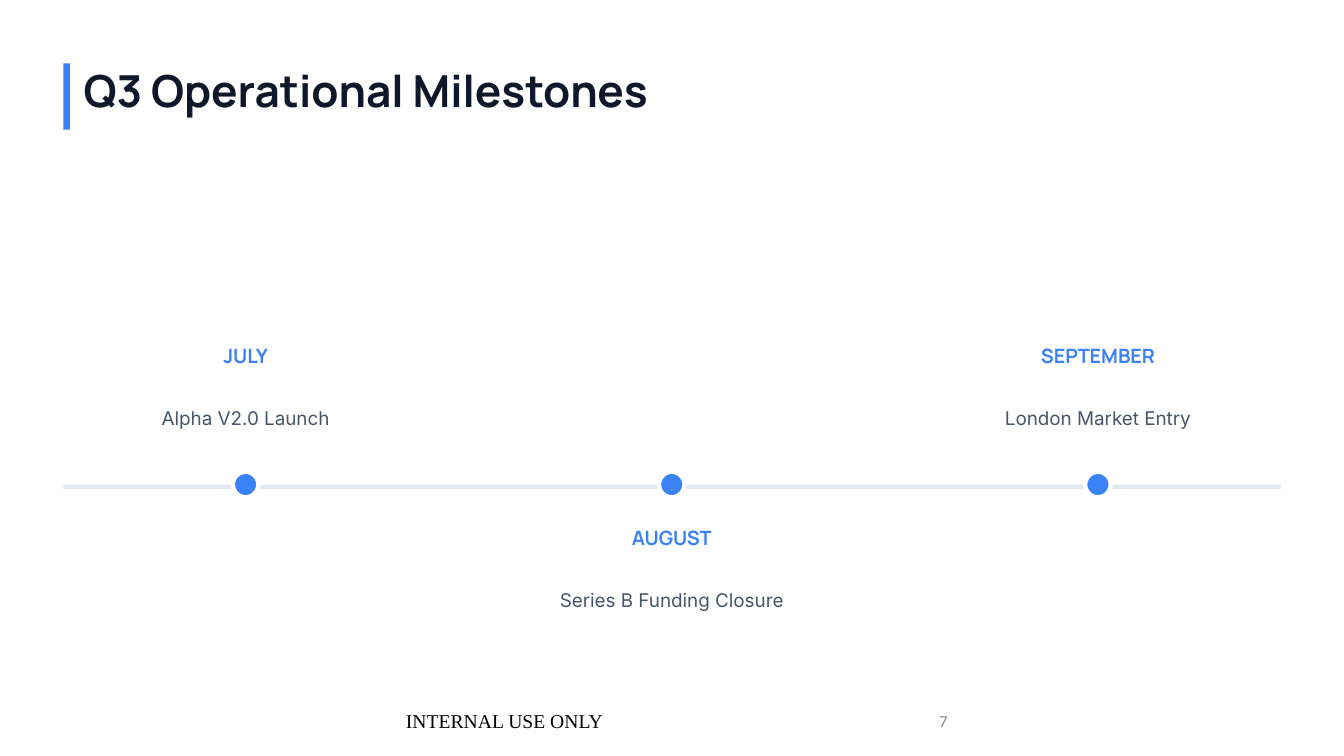
"""Build the Q3 operational milestones timeline slide."""
from pptx import Presentation
from pptx import util as u
from pptx.dml.color import RGBColor
from pptx.enum import shapes, text

BLUE, NAVY, SLATE, RAIL = "3B82F6", "0F172A", "475569", "E2E8F0"
HEADING, BODY = "Manrope", "Inter"
LEFT, TOP = 1.6, 1.6
MILESTONES = [
    ("JULY", "Alpha V2.0 Launch", 8.66),
    ("AUGUST", "Series B Funding Closure", 13.26),
    ("SEPTEMBER", "London Market Entry", 8.66),
]


def paint(target, colour):
    target.rgb = RGBColor.from_string(colour)


def write(frame, wording, *, size, font, colour, bold=False,
          align=text.PP_ALIGN.LEFT, anchor=text.MSO_ANCHOR.TOP,
          spacing=1.0, inset=(0, 0)):
    frame.word_wrap = True
    frame.auto_size = text.MSO_AUTO_SIZE.NONE
    frame.vertical_anchor = anchor
    frame.margin_left = frame.margin_right = u.Cm(inset[0])
    frame.margin_top = frame.margin_bottom = u.Cm(inset[1])
    paragraph = frame.paragraphs[0]
    paragraph.alignment = align
    paragraph.line_spacing = spacing
    run = paragraph.add_run()
    run.text = wording
    run.font.size = u.Pt(size)
    run.font.name = font
    run.font.bold = bold
    paint(run.font.color, colour)


class TimelineSlide:
    def __init__(self, deck):
        self.slide = deck.slides.add_slide(deck.slide_layouts[5])
        background = self.slide.background.fill
        background.solid()
        paint(background.fore_color, "FFFFFF")

    def title(self, wording, x, y, width, height):
        heading = self.slide.shapes.title
        heading.left, heading.top = u.Cm(x), u.Cm(y)
        heading.width, heading.height = u.Cm(width), u.Cm(height)
        write(heading.text_frame, wording, size=31.5, font=HEADING,
              colour=NAVY, bold=True)

    def label(self, wording, x, y, width, height, **style):
        box = self.slide.shapes.add_textbox(
            u.Cm(x), u.Cm(y), u.Cm(width), u.Cm(height))
        write(box.text_frame, wording, **style)

    def block(self, kind, x, y, width, height, colour):
        block = self.slide.shapes.add_shape(
            kind, u.Cm(x), u.Cm(y), u.Cm(width), u.Cm(height))
        block.shadow.inherit = False
        block.fill.solid()
        paint(block.fill.fore_color, colour)
        block.line.fill.background()
        return block

    def bar(self, x, y, width, height, colour):
        self.block(shapes.MSO_SHAPE.RECTANGLE, x, y, width, height, colour)

    def dot(self, centre, y, size):
        dot = self.block(shapes.MSO_SHAPE.ROUNDED_RECTANGLE,
                         centre - size / 2, y, size, size, BLUE)
        dot.adjustments[0] = 0.5
        dot.line.fill.solid()
        paint(dot.line.fill.fore_color, "FFFFFF")
        dot.line.width = u.Pt(3)

    def milestone(self, month, event, centre, y):
        middle = text.PP_ALIGN.CENTER
        self.label(month, centre - 4.84, y, 9.68, 0.58, size=14.1,
                   font=HEADING, colour=BLUE, bold=True, align=middle)
        self.label(event, centre - 4.6, y + 1.24, 9.2, 0.91, size=13.5,
                   font=BODY, colour=SLATE, align=middle, spacing=1.6)
        self.dot(centre, 11.89, 0.64)

    def footer(self, wording, x, width, **style):
        self.label(wording, x, 17.65, width, 1.02, inset=(0.25, 0.13),
                   anchor=text.MSO_ANCHOR.MIDDLE, **style)


def main():
    deck = Presentation()
    deck.slide_width, deck.slide_height = u.Cm(33.87), u.Cm(19.05)
    page = TimelineSlide(deck)
    page.title("Q3 Operational Milestones", 2.11, TOP, 27.23, 1.32)
    page.bar(LEFT, TOP, 0.16, 1.67, BLUE)
    page.bar(LEFT, 12.22, 30.68, 0.1, RAIL)
    for index, (month, event, y) in enumerate(MILESTONES):
        page.milestone(month, event, 6.19 + 10.74 * index, y)
    page.footer("INTERNAL USE ONLY", 8.69, 8.05, size=14,
                font="Times New Roman", colour="000000",
                align=text.PP_ALIGN.CENTER)
    page.footer("7", 18.21, 5.92, size=12, font="Calibri",
                colour="888888", align=text.PP_ALIGN.RIGHT)
    deck.save("out.pptx")


if __name__ == "__main__":
    main()
